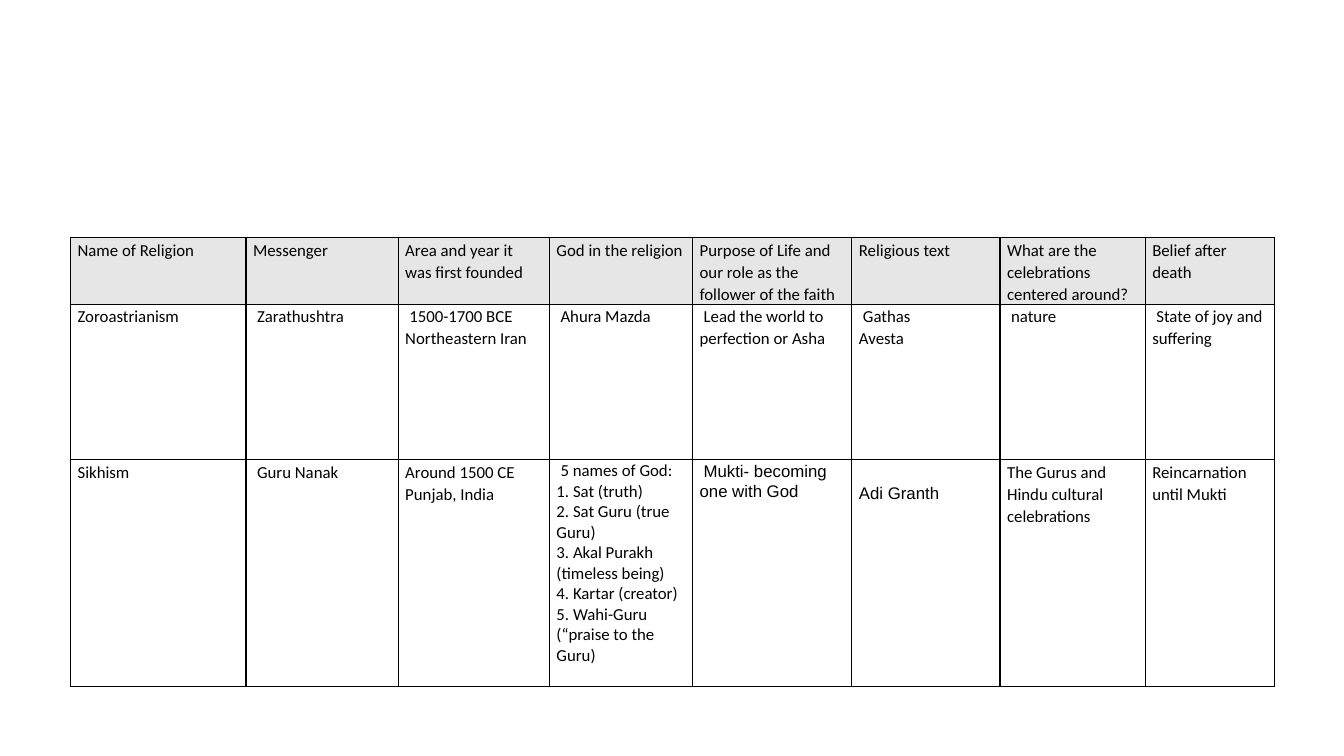
from dataclasses import dataclass

import pptx
import pptx.dml.color
import pptx.oxml
import pptx.oxml.ns
import pptx.table
import pptx.util

Inches = pptx.util.Inches
Pt = pptx.util.Pt

COLORS = {"text": "000000", "border": "000000", "header": "E7E6E6", "body": "FFFFFF"}
COLUMN_WIDTHS = [1.74, 1.51, 1.5, 1.42, 1.58, 1.47, 1.44, 1.28]
ROW_HEIGHTS = [0.66, 1.54, 2.25]


@dataclass(frozen=True)
class Entry:
    lines: tuple[str, ...]
    indented: bool = False
    font: str = "Calibri"
    line_spacing: float = 1.07
    top: float = 0.01


def entry(*lines: str) -> Entry:
    return Entry(lines)


def indented(*lines: str) -> Entry:
    """Entry whose first line starts slightly to the right."""
    return Entry(lines, indented=True)


HEADINGS = [
    entry("Name of Religion"),
    entry("Messenger"),
    entry("Area and year it was first founded"),
    entry("God in the religion"),
    entry("Purpose of Life and our role as the follower of the faith"),
    entry("Religious text"),
    entry("What are the celebrations centered around?"),
    entry("Belief after death"),
]
ZOROASTRIANISM = [
    entry("Zoroastrianism"),
    indented("Zarathushtra"),
    indented("1500-1700 BCE", "Northeastern Iran"),
    indented("Ahura Mazda"),
    indented("Lead the world to perfection or Asha"),
    indented("Gathas", "Avesta"),
    indented("nature"),
    indented("State of joy and suffering"),
]
NAMES_OF_GOD = (
    "5 names of God:",
    "1. Sat (truth)",
    "2. Sat Guru (true Guru)",
    "3. Akal Purakh (timeless being)",
    "4. Kartar (creator)",
    "5. Wahi-Guru (“praise to the Guru)",
)
SIKHISM = [
    entry("Sikhism"),
    indented("Guru Nanak"),
    entry("Around 1500 CE", "Punjab, India"),
    Entry(NAMES_OF_GOD, indented=True, line_spacing=1.0),
    Entry(("Mukti- becoming one with God",), indented=True, font="Arial"),
    Entry(("Adi Granth",), font="Arial", top=0.23),
    entry("The Gurus and Hindu cultural celebrations"),
    entry("Reincarnation until Mukti"),
]


def rgb(name: str) -> pptx.dml.color.RGBColor:
    return pptx.dml.color.RGBColor.from_string(COLORS[name])


def add_borders(cell: pptx.table._Cell) -> None:
    properties = cell._tc.get_or_add_tcPr()
    for side in ("lnL", "lnR", "lnT", "lnB"):
        properties.append(pptx.oxml.parse_xml(
            f'<a:{side} {pptx.oxml.ns.nsdecls("a")} w="{Pt(1)}"><a:solidFill>'
            f'<a:srgbClr val="{COLORS["border"]}"/></a:solidFill></a:{side}>'))


def fill_cell(cell: pptx.table._Cell, content: Entry, background: str) -> None:
    add_borders(cell)
    cell.fill.solid()
    cell.fill.fore_color.rgb = rgb(background)
    cell.margin_left = cell.margin_right = Inches(0.07)
    cell.margin_top = Inches(content.top)
    cell.margin_bottom = 0
    cell.text_frame.text = "\n".join(content.lines)
    for paragraph in cell.text_frame.paragraphs:
        paragraph.line_spacing = content.line_spacing
        paragraph.font.name = content.font
        paragraph.font.size = Pt(12)
        paragraph.font.color.rgb = rgb("text")
    if content.indented:
        first = cell.text_frame.paragraphs[0]
        first._p.get_or_add_pPr().set("indent", str(Inches(0.04)))


def main() -> None:
    presentation = pptx.Presentation()
    presentation.slide_width = Inches(13.33)
    presentation.slide_height = Inches(7.5)
    slide = presentation.slides.add_slide(presentation.slide_layouts[6])

    religions = slide.shapes.add_table(
        len(ROW_HEIGHTS), len(COLUMN_WIDTHS), Inches(0.7), Inches(2.36),
        Inches(sum(COLUMN_WIDTHS)), Inches(sum(ROW_HEIGHTS))).table
    religions.first_row = religions.horz_banding = False
    for column, width in zip(religions.columns, COLUMN_WIDTHS):
        column.width = Inches(width)
    for row, height in zip(religions.rows, ROW_HEIGHTS):
        row.height = Inches(height)

    for row, entries in zip(religions.rows, (HEADINGS, ZOROASTRIANISM, SIKHISM)):
        background = "header" if entries is HEADINGS else "body"
        for cell, content in zip(row.cells, entries):
            fill_cell(cell, content, background)

    presentation.save("out.pptx")


if __name__ == "__main__":
    main()
